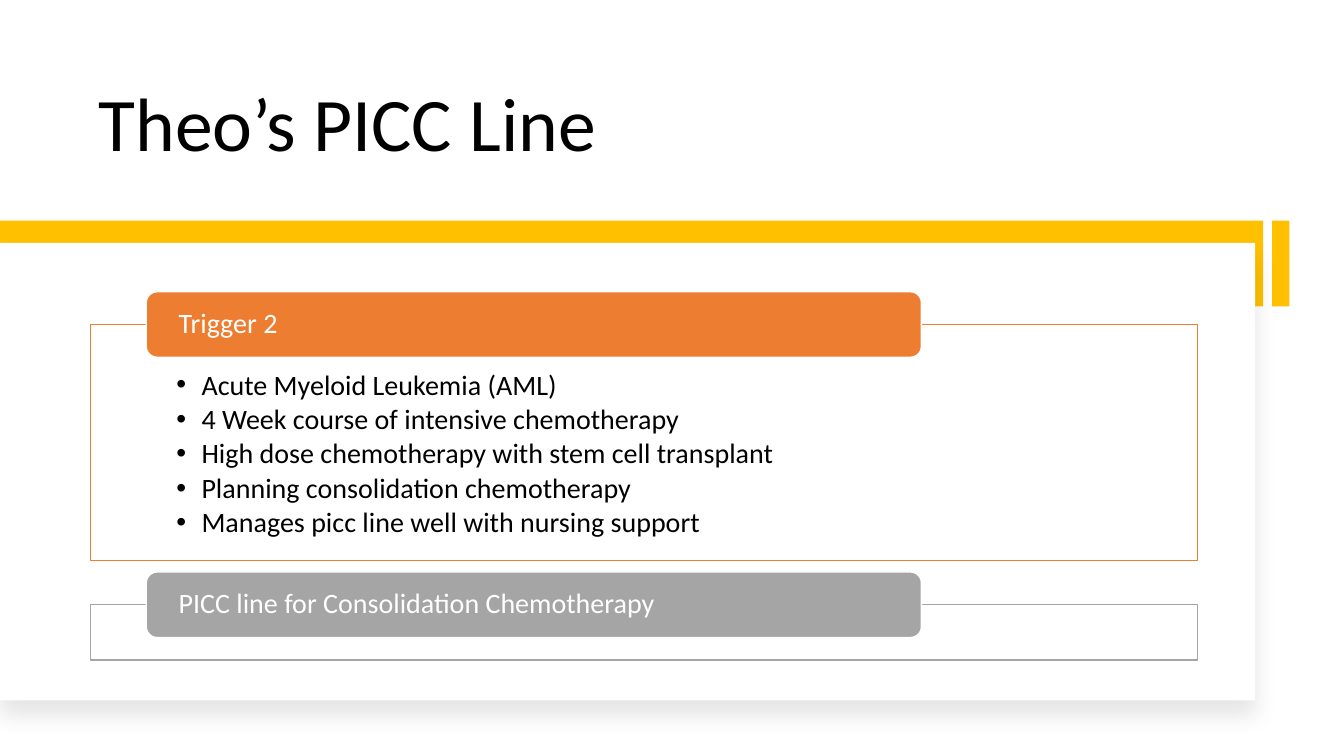
from dataclasses import dataclass

from lxml.etree import SubElement
from pptx import Presentation
from pptx.dml.color import RGBColor
from pptx.enum.shapes import MSO_SHAPE
from pptx.enum.text import MSO_ANCHOR, MSO_AUTO_SIZE, PP_ALIGN
from pptx.oxml.ns import qn
from pptx.util import Inches, Pt

SLIDE_WIDTH = Inches(13.33)
SLIDE_HEIGHT = Inches(7.5)


@dataclass(frozen=True)
class Theme:
    font: str = "Calibri"
    title_size: int = 54
    text_size: int = 20
    ink: str = "000000"
    paper: str = "FFFFFF"
    band: str = "FFC000"
    trigger: str = "ED7D31"
    purpose: str = "A5A5A5"


THEME = Theme()
PANEL_LEFT, PANEL_WIDTH = 6.75, 82.35
TAB_LEFT, TAB_WIDTH, TAB_HEIGHT = 10.88, 57.68, 8.67
BAND_TOP, BAND_HEIGHT = 29.2, 11.33

TRIGGER_POINTS = [
    "Acute Myeloid Leukemia (AML)",
    "4 Week course of intensive chemotherapy",
    "High dose chemotherapy with stem cell transplant",
    "Planning consolidation chemotherapy",
    "Manages picc line well with nursing support",
]


def across(percent):
    return round(SLIDE_WIDTH * percent / 100)


def down(percent):
    return round(SLIDE_HEIGHT * percent / 100)


def box(left, top, width, height):
    return across(left), down(top), across(width), down(height)


def add_block(slide, area, fill, line=None, kind=MSO_SHAPE.RECTANGLE):
    block = slide.shapes.add_shape(kind, *box(*area))
    block.shadow.inherit = False
    block.fill.solid()
    block.fill.fore_color.rgb = RGBColor.from_string(fill)
    if line:
        block.line.color.rgb = RGBColor.from_string(line)
        block.line.width = Pt(1)
    else:
        block.line.fill.background()
    return block


def set_opacity(block, percent):
    color = block._element.spPr.find(qn("a:solidFill")).find(qn("a:srgbClr"))
    SubElement(color, qn("a:alpha"), val=str(percent * 1000))


def cast_shadow(block):
    effects = block._element.spPr.find(qn("a:effectLst"))
    shadow = SubElement(effects, qn("a:outerShdw"), blurRad=str(Pt(15)),
                        dist=str(Pt(11)), dir="5400000", algn="t", rotWithShape="0")
    color = SubElement(shadow, qn("a:srgbClr"), val=THEME.ink)
    SubElement(color, qn("a:alpha"), val="10000")


def style(paragraph, size, color, space_after=0):
    paragraph.alignment = PP_ALIGN.LEFT
    paragraph.line_spacing = 0.9
    paragraph.space_before = Pt(0)
    paragraph.space_after = Pt(space_after)
    paragraph.font.name = THEME.font
    paragraph.font.size = Pt(size)
    paragraph.font.color.rgb = RGBColor.from_string(color)


def add_bullet(paragraph):
    properties = paragraph._p.get_or_add_pPr()
    properties.set("marL", str(Inches(0.25)))
    properties.set("indent", str(Inches(-0.25)))
    SubElement(properties, qn("a:buChar"), char="•")
    properties.append(properties.find(qn("a:defRPr")))


def place(placeholder, area):
    placeholder.left, placeholder.top, placeholder.width, placeholder.height = box(*area)
    placeholder.text_frame.auto_size = MSO_AUTO_SIZE.NONE
    placeholder.text_frame.word_wrap = True


def write_title(title, text):
    place(title, (6.6, 5.6, 75.75, 17.33))
    title.text_frame.vertical_anchor = MSO_ANCHOR.BOTTOM
    title.text_frame.text = text
    style(title.text_frame.paragraphs[0], THEME.title_size, THEME.ink)


def write_points(slide, body, points, area):
    place(body, area)
    slide.shapes._spTree.append(body._element)
    frame = body.text_frame
    frame.vertical_anchor = MSO_ANCHOR.TOP
    frame.margin_left = frame.margin_right = across(6.37)
    frame.margin_top, frame.margin_bottom = down(6.13), down(2.13)
    frame.text = "\n".join(points)
    for paragraph in frame.paragraphs:
        style(paragraph, THEME.text_size, THEME.ink, space_after=3)
        add_bullet(paragraph)


def add_panel(slide, heading, top, height, color):
    area = (PANEL_LEFT, top, PANEL_WIDTH, height)
    set_opacity(add_block(slide, area, THEME.paper, color), 90)
    tab_area = (TAB_LEFT, top - TAB_HEIGHT / 2, TAB_WIDTH, TAB_HEIGHT)
    tab = add_block(slide, tab_area, color, THEME.paper, MSO_SHAPE.ROUNDED_RECTANGLE)
    frame = tab.text_frame
    frame.word_wrap = True
    frame.vertical_anchor = MSO_ANCHOR.MIDDLE
    frame.margin_left = frame.margin_right = across(2.18)
    frame.margin_top = frame.margin_bottom = 0
    frame.text = heading
    style(frame.paragraphs[0], THEME.text_size, THEME.paper)
    return area


def add_backdrop(slide):
    for left, width in ((94.65, 1.28), (0, 93.98)):
        add_block(slide, (left, BAND_TOP, width, BAND_HEIGHT), THEME.band)
    cast_shadow(add_block(slide, (0, 32.13, 93.38, 60.53), THEME.paper))


def main():
    deck = Presentation()
    deck.slide_width, deck.slide_height = SLIDE_WIDTH, SLIDE_HEIGHT
    slide = deck.slides.add_slide(deck.slide_layouts[1])
    write_title(slide.shapes.title, "Theo’s PICC Line")
    add_backdrop(slide)
    trigger_area = add_panel(slide, "Trigger 2", 42.93, 31.2, THEME.trigger)
    write_points(slide, slide.placeholders[1], TRIGGER_POINTS, trigger_area)
    add_panel(slide, "PICC line for Consolidation Chemotherapy", 80, 7.33, THEME.purpose)
    deck.save("out.pptx")


if __name__ == "__main__":
    main()
